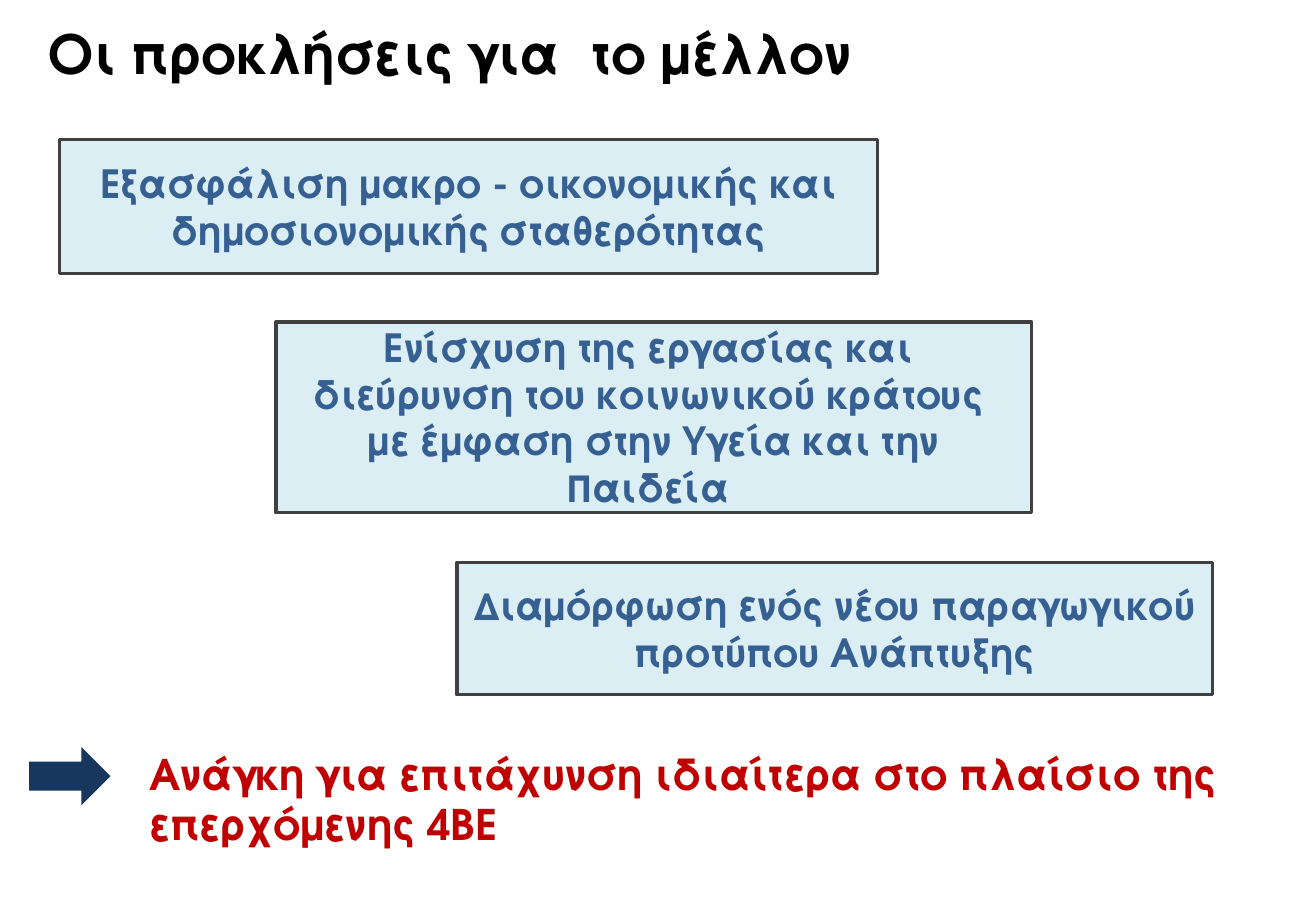
from pptx import Presentation
from pptx.dml.color import RGBColor
from pptx.enum.shapes import MSO_SHAPE
from pptx.enum.text import MSO_ANCHOR, PP_ALIGN
from pptx.util import Inches, Pt

FONT = "TeX Gyre Adventor"


def color(value):
    return RGBColor.from_string(value)


def write(shape, text, size, fill, align=PP_ALIGN.LEFT, anchor=MSO_ANCHOR.TOP):
    """Fill a shape with bold text, one paragraph per line."""
    frame = shape.text_frame
    frame.word_wrap = True
    frame.vertical_anchor = anchor
    for index, line in enumerate(text.split("\n")):
        para = frame.add_paragraph() if index else frame.paragraphs[0]
        para.alignment = align
        span = para.add_run()
        span.text = line
        span.font.name = FONT
        span.font.size = Pt(size)
        span.font.bold = True
        span.font.color.rgb = color(fill)


deck = Presentation()
deck.slide_width = Inches(10.83)
deck.slide_height = Inches(7.5)
page = deck.slides.add_slide(deck.slide_layouts[6])

# Title and conclusion
captions = [
    ("Οι προκλήσεις για  το μέλλον", 32, "000000", (0.3, 0.12, 7.8, 0.64)),
    ("Ανάγκη για επιτάχυνση ιδιαίτερα στο πλαίσιο της επερχόμενης 4ΒΕ",
     25, "C00000", (1.13, 6.11, 9.64, 0.94)),
]
for text, size, fill, place in captions:
    caption = page.shapes.add_textbox(*map(Inches, place))
    write(caption, text, size, fill)

# Challenges, stepping down to the right
challenges = [
    ("Εξασφάλιση μακρο - οικονομικής και δημοσιονομικής σταθερότητας",
     (0.49, 1.15, 6.73, 1.1)),
    ("Ενίσχυση της εργασίας και \nδιεύρυνση του κοινωνικού κράτους \n"
     "με έμφαση στην Υγεία και την Παιδεία ",
     (2.27, 2.65, 6.22, 1.57)),
    ("Διαμόρφωση ενός νέου παραγωγικού προτύπου Ανάπτυξης",
     (3.76, 4.63, 6.22, 1.09)),
]
for text, place in challenges:
    box = page.shapes.add_shape(MSO_SHAPE.RECTANGLE, *map(Inches, place))
    box.shadow.inherit = False
    box.fill.solid()
    box.fill.fore_color.rgb = color("DBEEF4")
    box.line.color.rgb = color("404040")
    box.line.width = Pt(2)
    write(box, text, 23, "376092", align=PP_ALIGN.CENTER, anchor=MSO_ANCHOR.MIDDLE)

# Arrow pointing at the conclusion
arrow = page.shapes.add_shape(
    MSO_SHAPE.RIGHT_ARROW, *map(Inches, (0.24, 6.15, 0.67, 0.48)))
arrow.shadow.inherit = False
arrow.fill.solid()
arrow.fill.fore_color.rgb = color("17375E")
arrow.line.fill.background()

deck.save("out.pptx")
